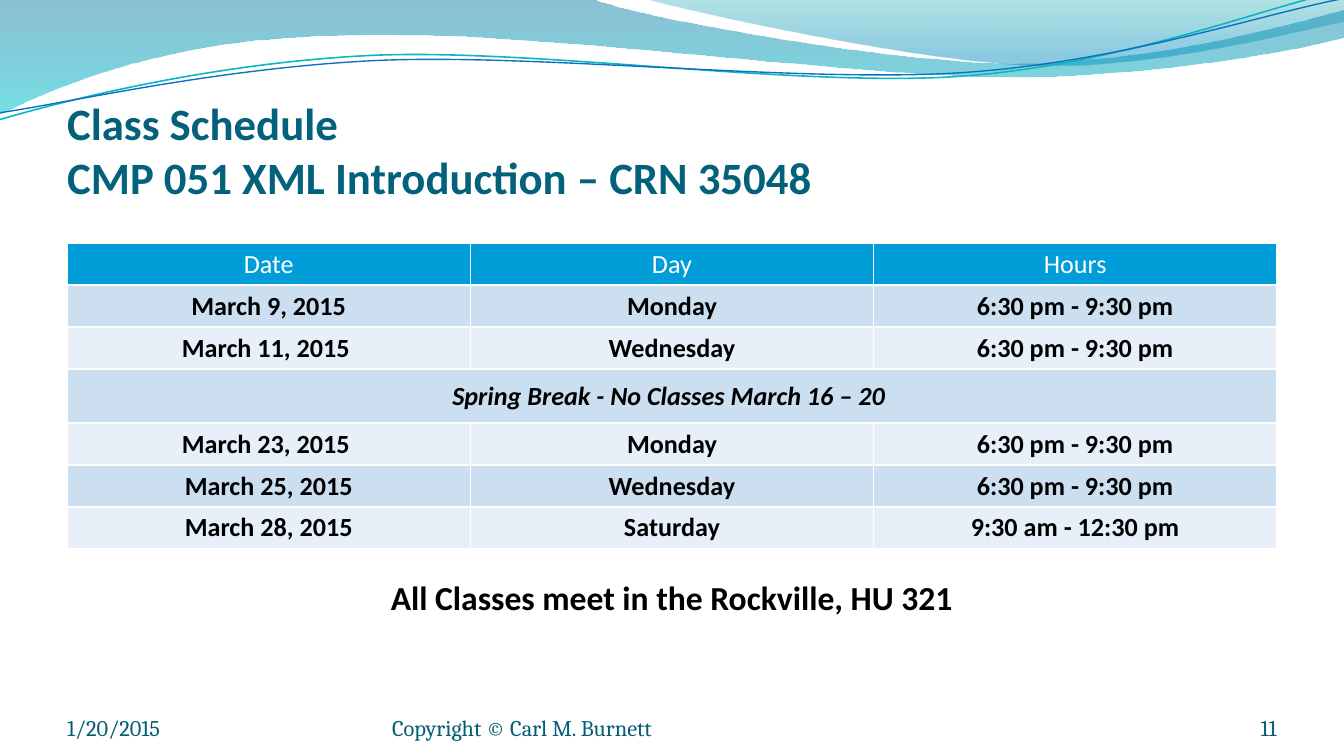
from pptx import Presentation
from pptx.dml.color import RGBColor
from pptx.enum.text import MSO_ANCHOR, PP_ALIGN
from pptx.oxml.ns import qn
from pptx.util import Cm, Pt
from lxml import etree

LEFT, CENTER, RIGHT = PP_ALIGN.LEFT, PP_ALIGN.CENTER, PP_ALIGN.RIGHT
TOP, MIDDLE, BOTTOM = MSO_ANCHOR.TOP, MSO_ANCHOR.MIDDLE, MSO_ANCHOR.BOTTOM

WHITE = RGBColor(0xFF, 0xFF, 0xFF)
BLACK = RGBColor(0x00, 0x00, 0x00)
TITLE_TEAL = RGBColor(0x04, 0x61, 0x7B)
FOOTER_TEAL = RGBColor(0x04, 0x5D, 0x75)
HEADER_BLUE = RGBColor(0x00, 0x9D, 0xD9)
BAND_DARK = RGBColor(0xCC, 0xDF, 0xF1)
BAND_LIGHT = RGBColor(0xE7, 0xEF, 0xF8)
DEEP_BLUE = RGBColor(0x00, 0x74, 0xA1)
AQUA = RGBColor(0x00, 0xC6, 0xCF)
SEA_GREEN = RGBColor(0x00, 0xA1, 0xA9)
SKY_BLUE = RGBColor(0x00, 0x8B, 0xBF)
LINE_TEAL = RGBColor(0x0A, 0xB8, 0xBF)
LINE_BLUE = RGBColor(0x0F, 0x6F, 0xC6)

LINE_TILT = 357.3
MARGIN = 1.27
CONTENT_WIDTH = 22.86
FOOTER_TOP, FOOTER_HEIGHT = 13.25, 0.76

LARGE_WAVE = [
    [(-0.03, -0.03)],
    [(11.18, -0.03)],
    [(12.09, 0.33), (16.87, 1.19), (19.25, 1.19)],
    [(21.67, 1.19), (24.33, 0.48), (25.4, 0.18)],
    [(25.43, 0.69)],
    [(24.97, 0.84), (22.1, 1.45), (18.95, 1.45)],
    [(15.8, 1.42), (9.7, 0.53), (6.53, 0.66)],
    [(3.28, 0.69), (1.17, 1.57), (-0.03, 2.16)],
]
SMALL_WAVE = [
    [(12.17, -0.03)],
    [(12.93, 0.2), (17.32, 1.17), (19.53, 1.24)],
    [(21.74, 1.32), (24.41, 0.61), (25.4, 0.41)],
    [(25.4, 0)],
]
TEAL_LINE = [
    [(-0.04, 1.66)],
    [(1.19, 1.36), (4.02, 0.78), (7.05, 0.78)],
    [(10.07, 0.79), (15.01, 1.76), (18.06, 1.7)],
    [(21.14, 1.64), (23.88, 0.68), (25.4, 0.42)],
]
BLUE_LINE = [
    [(-0.03, 1.53)],
    [(1.16, 1.42), (4.17, 0.87), (7.2, 0.88)],
    [(10.25, 0.9), (15.14, 1.69), (18.19, 1.63)],
    [(21.22, 1.57), (23.92, 0.78), (25.44, 0.57)],
]

EVENING = "6:30 pm - 9:30 pm"
BREAK_ROW = 3
SCHEDULE = [
    ("Date", "Day", "Hours"),
    ("March 9, 2015", "Monday", EVENING),
    ("March 11, 2015 ", "Wednesday", EVENING),
    ("Spring Break - No Classes March 16 – 20 ",),
    ("March 23, 2015 ", "Monday", EVENING),
    ("March 25, 2015", "Wednesday", EVENING),
    ("March 28, 2015", "Saturday", "9:30 am - 12:30 pm"),
]


class SlideBuilder:
    def __init__(self, slide, heading_font, footer_font):
        self.slide = slide
        self.heading_font = heading_font
        self.footer_font = footer_font

    def style_text(self, text_frame, font_name, size, color, align, bold=False, italic=False):
        for paragraph in text_frame.paragraphs:
            paragraph.alignment = align
            for run in paragraph.runs:
                font = run.font
                font.name, font.size = font_name, Pt(size)
                font.bold, font.italic = bold, italic
                font.color.rgb = color

    def outline(self, segments, close):
        points = [(Cm(x), Cm(y)) for segment in segments for x, y in segment]
        builder = self.slide.shapes.build_freeform(*points[0])
        builder.add_line_segments(points[1:], close=close)
        shape = builder.convert_to_shape()
        shape.shadow.inherit = False
        lines = iter(list(shape.element.iter(qn("a:lnTo"))))
        for segment in segments[1:]:
            first, *others = [next(lines) for _ in segment]
            if others:
                curve = etree.Element(qn("a:cubicBezTo"))
                first.addprevious(curve)
                for line in (first, *others):
                    curve.append(line[0])
                    line.getparent().remove(line)
        return shape

    def wave(self, segments, stops):
        shape = self.outline(segments, True)
        shape.line.fill.background()
        shape.fill.gradient()
        shape.fill.gradient_angle = 270
        for stop, (position, color, _) in zip(shape.fill.gradient_stops, stops):
            stop.position = position
            stop.color.rgb = color
        colors = shape.element.spPr.iter(qn("a:srgbClr"))
        for element, (_, _, opacity) in zip(colors, stops):
            etree.SubElement(element, qn("a:alpha"), val=str(opacity * 1000))

    def wave_line(self, segments, color, width):
        shape = self.outline(segments, False)
        shape.rotation = LINE_TILT
        shape.fill.background()
        shape.line.color.rgb = color
        shape.line.width = Pt(width)

    def text(self, text, box, font_name, size, color, align=LEFT, anchor=BOTTOM,
             bold=False, insets=(0, 0, 0, 0), wrap=True):
        shape = self.slide.shapes.add_textbox(*map(Cm, box))
        frame = shape.text_frame
        frame.word_wrap = wrap
        frame.vertical_anchor = anchor
        frame.margin_left, frame.margin_top, frame.margin_right, frame.margin_bottom = map(Cm, insets)
        frame.text = text
        self.style_text(frame, font_name, size, color, align, bold)

    def footer(self, text, left, width, align=LEFT):
        self.text(text, (left, FOOTER_TOP, width, FOOTER_HEIGHT),
                  self.footer_font, 12, FOOTER_TEAL, align)

    def border(self, cell, side):
        line = etree.SubElement(cell._tc.get_or_add_tcPr(), qn(f"a:ln{side}"), w=str(Pt(1)))
        fill = etree.SubElement(line, qn("a:solidFill"))
        etree.SubElement(fill, qn("a:srgbClr"), val=str(WHITE))

    def table(self, rows, box, row_height, break_height):
        table = self.slide.shapes.add_table(len(rows), len(rows[0]), *map(Cm, box)).table
        table.cell(BREAK_ROW, 0).merge(table.cell(BREAK_ROW, len(rows[0]) - 1))
        for index, texts in enumerate(rows):
            header, holiday = index == 0, index == BREAK_ROW
            table.rows[index].height = Cm(break_height if holiday else row_height)
            band = BAND_DARK if index % 2 else BAND_LIGHT
            for column, cell in enumerate(table.rows[index].cells):
                for side in "LRTB":
                    self.border(cell, side)
                cell.fill.solid()
                cell.fill.fore_color.rgb = HEADER_BLUE if header else band
                cell.margin_top, cell.margin_bottom = Cm(0.1), Cm(0.09)
                cell.vertical_anchor = MIDDLE if holiday else TOP
                if column < len(texts):
                    cell.text_frame.text = texts[column]
                    self.style_text(cell.text_frame, self.heading_font, 14,
                                    WHITE if header else BLACK, CENTER, not header, holiday)


def main():
    presentation = Presentation()
    presentation.slide_width, presentation.slide_height = Cm(25.4), Cm(14.29)
    slide = presentation.slides.add_slide(presentation.slide_layouts[6])
    builder = SlideBuilder(slide, "Calibri", "Cambria")

    builder.wave(LARGE_WAVE, [(0, DEEP_BLUE, 45), (1, AQUA, 55)])
    builder.wave(SMALL_WAVE, [(0, SEA_GREEN, 30), (0.8, SKY_BLUE, 45)])
    builder.wave_line(TEAL_LINE, LINE_TEAL, 0.85)
    builder.wave_line(BLUE_LINE, LINE_BLUE, 0.75)

    builder.text("Class Schedule\vCMP 051 XML Introduction – CRN 35048",
                 (MARGIN, 1.46, CONTENT_WIDTH, 2.38), builder.heading_font, 24,
                 TITLE_TEAL, bold=True, insets=(0, 0.13, 0, 0))
    builder.table(SCHEDULE, (MARGIN, 4.6, CONTENT_WIDTH, 5.77), 0.79, 1.03)
    builder.footer("1/20/2015", MARGIN, 5.92)
    builder.footer("Copyright © Carl M. Burnett", 7.41, 9.31)
    builder.footer("11", 22.01, 2.12, RIGHT)
    builder.text("All Classes meet in the Rockville, HU 321", (7.09, 10.78, 11.22, 1.03),
                 builder.heading_font, 18, BLACK, CENTER, TOP, True,
                 (0.25, 0.13, 0.25, 0.13), False)
    presentation.save("out.pptx")


if __name__ == "__main__":
    main()
